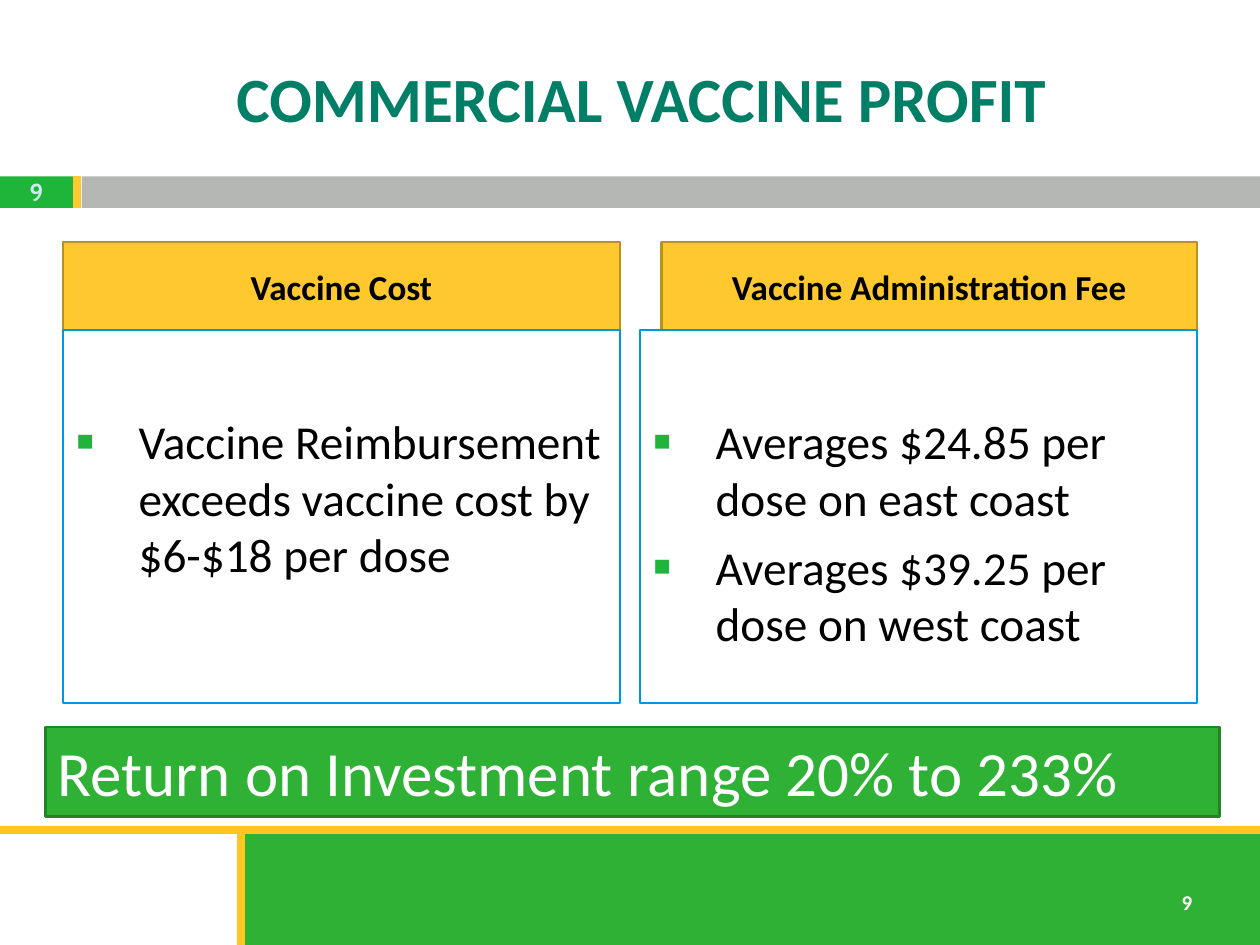
"""Build the commercial vaccine profit slide."""
from lxml import etree
from pptx import Presentation
from pptx.dml.color import RGBColor
from pptx.enum.shapes import MSO_CONNECTOR, MSO_SHAPE
from pptx.enum.text import MSO_ANCHOR, MSO_AUTO_SIZE, PP_ALIGN
from pptx.oxml.ns import qn
from pptx.util import Inches, Pt

RECT, STRAIGHT = MSO_SHAPE.RECTANGLE, MSO_CONNECTOR.STRAIGHT
TOP, MIDDLE = MSO_ANCHOR.TOP, MSO_ANCHOR.MIDDLE
LEFT, CENTER = PP_ALIGN.LEFT, PP_ALIGN.CENTER
NO_FIT = MSO_AUTO_SIZE.NONE

WHITE = RGBColor(0xFF, 0xFF, 0xFF)
BLACK = RGBColor(0, 0, 0)
GREEN = RGBColor(0x1E, 0xB5, 0x3A)
FIELD_GREEN = RGBColor(0x2E, 0xB1, 0x35)
DARK_GREEN = RGBColor(0x22, 0x83, 0x27)
TEAL = RGBColor(0x00, 0x7E, 0x66)
GRAY = RGBColor(0xB5, 0xB7, 0xB4)
YELLOW = RGBColor(0xFF, 0xC6, 0x1E)
GOLD = RGBColor(0xFF, 0xC8, 0x2E)
DARK_GOLD = RGBColor(0xBA, 0x92, 0x20)
BLUE = RGBColor(0x00, 0x98, 0xDB)
PALE = RGBColor(0xD1, 0xEA, 0xEE)

TITLE = "COMMERCIAL VACCINE PROFIT"
PAGE = "9"
RETURN = "Return on Investment range 20% to 233%"
COLUMNS = [
    {"header": "Vaccine Cost", "header_left": 0.5, "left": 0.5,
     "points": ["Vaccine Reimbursement exceeds vaccine cost by $6-$18 per dose"]},
    {"header": "Vaccine Administration Fee", "header_left": 5.25, "left": 5.08,
     "points": ["Averages $24.85 per dose on east coast",
                "Averages $39.25 per dose on west coast"]},
]
BANDS = [
    (0, 1.4, 0.58, 0.25, GREEN),
    (0.65, 1.4, 9.35, 0.25, GRAY),
    (1.91, 6.59, 8.09, 0.91, FIELD_GREEN),
]
RULES = [
    (0, 6.59, 10, 6.59, YELLOW),
    (1.91, 6.59, 1.91, 7.5, YELLOW),
    (0.61, 1.4, 0.61, 1.65, GOLD),
]
COLUMN_WIDTH, COLUMN_RIGHT_GAP = 4.42, 0.5
HEADER_TOP, HEADER_HEIGHT, BODY_HEIGHT = 1.92, 0.7, 2.96


def place(sp, left, top, width, height):
    sp.left, sp.top = Inches(left), Inches(top)
    sp.width, sp.height = Inches(width), Inches(height)


def paint(sp, fill, line=None):
    sp.fill.solid()
    sp.fill.fore_color.rgb = fill
    if line is None:
        sp.line.fill.background()
    else:
        sp.line.color.rgb = line
        sp.line.width = Pt(1.5)


def write(sp, text, size, color, bold=False, align=LEFT, anchor=TOP, font="Calibri", wrap=True):
    tf = sp.text_frame
    tf.text = text
    tf.word_wrap, tf.auto_size, tf.vertical_anchor = wrap, NO_FIT, anchor
    for i, p in enumerate(tf.paragraphs):
        p.alignment = align
        p.space_before = Pt(7 if i else 0)
        for r in p.runs:
            r.font.name, r.font.size, r.font.bold = font, Pt(size), bold
            r.font.color.rgb = color


def add_bullet(p):
    pPr = p._p.get_or_add_pPr()
    pPr.set("marL", str(Inches(0.5)))
    pPr.set("indent", str(Inches(-0.5)))
    color = etree.SubElement(pPr, qn("a:buClr"))
    etree.SubElement(color, qn("a:srgbClr"), val=str(GREEN))
    etree.SubElement(pPr, qn("a:buSzPct"), val="115000")
    etree.SubElement(pPr, qn("a:buFont"), typeface="Calibri")
    etree.SubElement(pPr, qn("a:buChar"), char="▪")


def add_rect(s, left, top, width, height, fill, line=None):
    sp = s.shapes.add_shape(RECT, Inches(left), Inches(top), Inches(width), Inches(height))
    sp.shadow.inherit = False
    paint(sp, fill, line)
    return sp


def add_rule(s, x1, y1, x2, y2, color):
    rule = s.shapes.add_connector(STRAIGHT, Inches(x1), Inches(y1), Inches(x2), Inches(y2))
    rule.line.color.rgb = color
    rule.line.width = Pt(4.5)
    etree.SubElement(rule._element.spPr, qn("a:effectLst"))


def add_column(header, body, column):
    right = column["left"] + COLUMN_WIDTH
    place(header, column["header_left"], HEADER_TOP, right - column["header_left"], HEADER_HEIGHT)
    paint(header, GOLD, DARK_GOLD)
    write(header, column["header"], 20, BLACK, True, CENTER, MIDDLE)
    place(body, column["left"], HEADER_TOP + HEADER_HEIGHT, COLUMN_WIDTH, BODY_HEIGHT)
    paint(body, WHITE, BLUE)
    write(body, "\n".join(column["points"]), 27, BLACK)
    body.text_frame.margin_top = Inches(0.65)
    for p in body.text_frame.paragraphs:
        add_bullet(p)


def main():
    prs = Presentation()
    prs.slide_width, prs.slide_height = Inches(10), Inches(7.5)
    s = prs.slides.add_slide(prs.slide_layouts[4])
    title, *bodies = s.placeholders
    place(title, 0.63, 0.3, 8.92, 0.95)
    write(title, TITLE, 36, TEAL, True, CENTER, MIDDLE)
    for header, body, column in zip(bodies[::2], bodies[1::2], COLUMNS):
        add_column(header, body, column)
    for band in BANDS:
        add_rect(s, *band)
    for rule in RULES:
        add_rule(s, *rule)
    corner = s.shapes.add_textbox(Inches(9.28), Inches(7.01), Inches(0.4), Inches(0.3))
    write(corner, PAGE, 12, WHITE, True, wrap=False)
    badge = s.shapes.add_textbox(Inches(0), Inches(1.39), Inches(0.58), Inches(0.27))
    write(badge, PAGE, 14, PALE, True, CENTER, MIDDLE, "Cabin")
    banner = add_rect(s, 0.36, 5.77, 9.32, 0.71, FIELD_GREEN, DARK_GREEN)
    write(banner, RETURN, 36, WHITE)
    prs.save("out.pptx")


if __name__ == "__main__":
    main()
